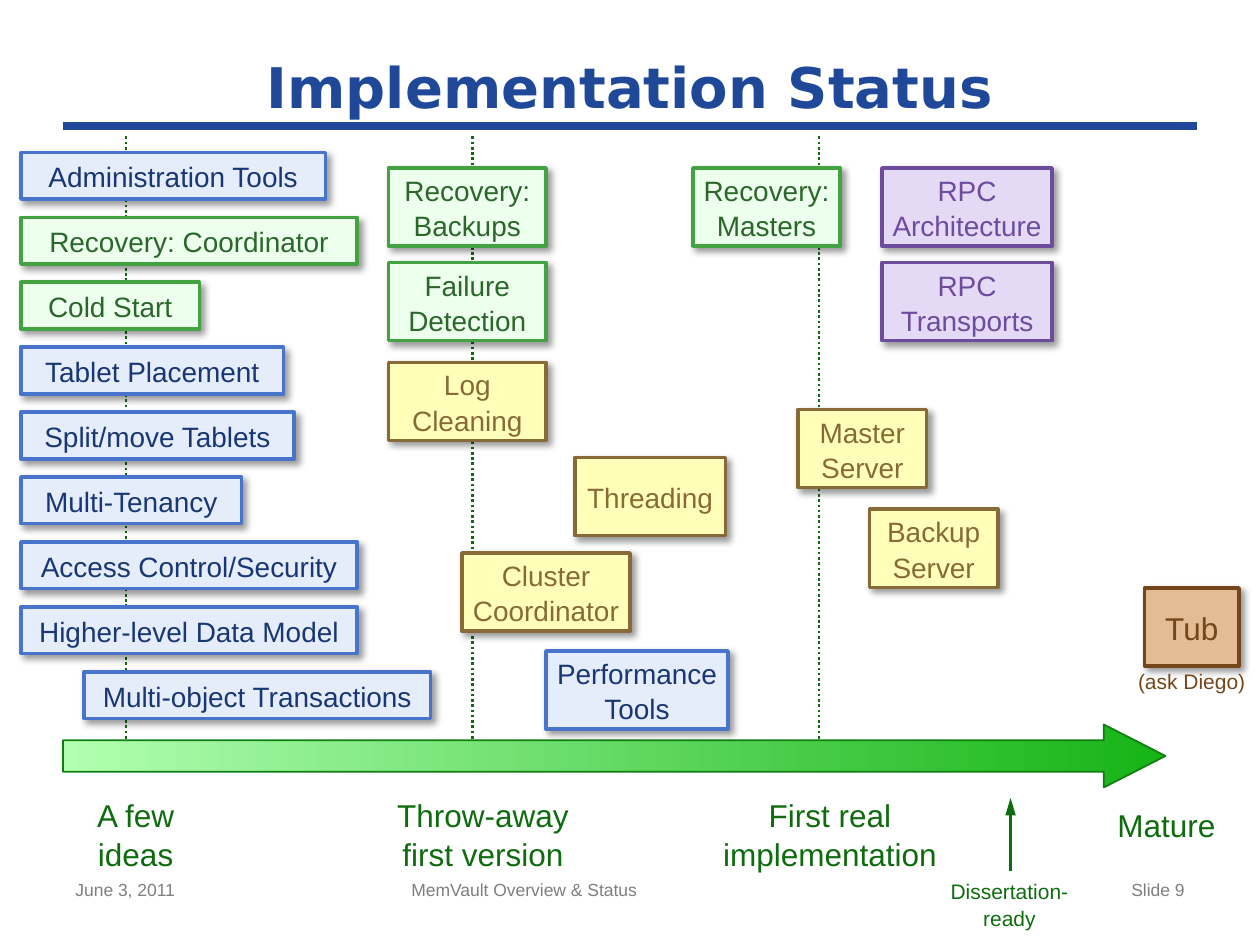
from dataclasses import dataclass

from lxml.etree import SubElement
from pptx import Presentation
from pptx.dml.color import RGBColor as Rgb
from pptx.enum.dml import MSO_LINE as Dash
from pptx.enum.shapes import MSO_CONNECTOR as Conn, MSO_SHAPE as Shape
from pptx.enum.text import MSO_ANCHOR as Anchor, MSO_AUTO_SIZE as Fit, PP_ALIGN as Align
from pptx.oxml.ns import qn
from pptx.util import Pt


@dataclass(frozen=True)
class Theme:
    font: str = "Arial"
    head: str = "DejaVu Sans"
    navy: str = "1F4899"
    green: str = "0E6C0E"
    edge: str = "107E10"
    pale: str = "B1FFB1"
    vivid: str = "16B416"
    gray: str = "7F7F7F"
    brown: str = "73471B"
    title: int = 32
    stage: int = 18
    chip: int = 16
    note: int = 12
    foot: int = 10


@dataclass(frozen=True)
class Box:
    x: float
    y: float
    w: float
    h: float

    def sub(self, x, y, w, h):
        """A box whose corner is measured from this one."""
        return Box(self.x + x, self.y + y, w, h)

    def pts(self):
        return Pt(self.x), Pt(self.y), Pt(self.w), Pt(self.h)


T = Theme()
CHIP_H = 44.7

# kind: fill, outline, text
KINDS = {
    "blue": ("E6EDFA", "4974CB", "183774"),
    "green": ("EDFFED", "43A343", "2B672B"),
    "gold": ("FFFFB9", "886A38", "886A38"),
    "violet": ("E5DAF6", "6D4C9E", "6D4C9E"),
    "brown": ("E3BC95", T.brown, T.brown),
}

# text, kind, indent, width
IDEAS = [
    ("Administration Tools", "blue", 0, 174),
    ("Recovery: Coordinator", "green", 0, 192),
    ("Cold Start", "green", 0, 102),
    ("Tablet Placement", "blue", 0, 150),
    ("Split/move Tablets", "blue", 0, 156),
    ("Multi-Tenancy", "blue", 0, 126),
    ("Access Control/Security", "blue", 0, 192),
    ("Higher-level Data Model", "blue", 0, 192),
    ("Multi-object Transactions", "blue", 36, 198),
]

# text, kind, left, top, width
PARTS = [
    ("Recovery:\nBackups", "green", 0, 0, 90),
    ("Failure\nDetection", "green", 0, 54, 90),
    ("Log\nCleaning", "gold", 0, 111, 90),
    ("Threading", "gold", 106.5, 165.4, 86),
    ("Cluster\nCoordinator", "gold", 42, 220, 96),
    ("Performance\nTools", "blue", 90, 276, 104),
    ("Recovery:\nMasters", "green", 174, 0, 84),
    ("RPC\nArchitecture", "violet", 282, 0, 97.2),
    ("RPC\nTransports", "violet", 282, 54, 97.2),
    ("Master\nServer", "gold", 234, 138, 73.5),
    ("Backup\nServer", "gold", 274.8, 195, 73.5),
]

# text, left, top, width, height
STAGES = [
    ("A few\nideas", 12, 0, 59, 51),
    ("Throw-away\nfirst version", 183, 0, 114, 51),
    ("First real\nimplementation", 369.5, 0, 137.5, 51),
    ("Mature", 595, 6, 71, 29),
]


def write(shape, text, size, color, align=Align.CENTER, font=T.font,
          bold=False, wrap=False):
    frame = shape.text_frame
    frame.word_wrap = wrap
    para = frame.paragraphs[0]
    para.alignment = align
    para.line_spacing = 1.05
    for i, line in enumerate(text.split("\n")):
        if i:
            para.add_line_break()
        run = para.add_run()
        run.text = line
        run.font.name, run.font.size, run.font.bold = font, Pt(size), bold
        run.font.color.rgb = Rgb.from_string(color)


def label(slide, box, text, size, color, **style):
    shape = slide.shapes.add_textbox(*box.pts())
    write(shape, text, size, color, **style)
    shape.text_frame.auto_size = Fit.SHAPE_TO_FIT_TEXT


def rule(slide, x1, y1, x2, y2, color, width):
    line = slide.shapes.add_connector(Conn.STRAIGHT, Pt(x1), Pt(y1), Pt(x2), Pt(y2))
    line.line.color.rgb = Rgb.from_string(color)
    line.line.width = Pt(width)
    SubElement(line._element.spPr, qn("a:effectLst"))
    return line


def shade(shape):
    """Drop shadow down and to the right."""
    shape.shadow.inherit = False
    effects = shape._element.spPr.find(qn("a:effectLst"))
    drop = SubElement(effects, qn("a:outerShdw"), blurRad=str(Pt(4)),
                      dist=str(Pt(3)), dir="2700000", algn="tl", rotWithShape="0")
    color = SubElement(drop, qn("a:srgbClr"), val="000000")
    SubElement(color, qn("a:alpha"), val="40000")


def chip(slide, box, text, kind, size=T.chip):
    fill, edge, ink = KINDS[kind]
    shape = slide.shapes.add_shape(Shape.RECTANGLE, *box.pts())
    shape.fill.solid()
    shape.fill.fore_color.rgb = Rgb.from_string(fill)
    shape.line.color.rgb = Rgb.from_string(edge)
    shape.line.width = Pt(2)
    shade(shape)
    shape.text_frame.vertical_anchor = Anchor.MIDDLE
    write(shape, text, size, ink)


def header(slide, box):
    end = box.y + box.h
    rule(slide, box.x, end, box.x + box.w, end, T.navy, 4.5)
    shape = slide.shapes.add_textbox(*box.pts())
    shape.text_frame.vertical_anchor = Anchor.MIDDLE
    write(shape, "Implementation Status", T.title, T.navy, font=T.head,
          bold=True, wrap=True)


def guides(slide, box):
    for i in range(3):
        x = box.x + i * box.w / 2
        line = rule(slide, x, box.y, x, box.y + box.h, T.green, 1.5)
        line.line.dash_style = Dash.ROUND_DOT


def footer(slide, box):
    cells = [
        ("June 3, 2011", 0, 168, Align.LEFT),
        ("MemVault Overview & Status", 192, 270, Align.LEFT),
        ("Slide 9", 480, 168, Align.RIGHT),
    ]
    for text, x, w, align in cells:
        shape = slide.shapes.add_textbox(*box.sub(x, 0, w, box.h).pts())
        write(shape, text, T.foot, T.gray, align=align, wrap=True)


def axis(slide, box):
    """Maturity arrow with its stage names below."""
    arrow = slide.shapes.add_shape(Shape.RIGHT_ARROW, *box.pts())
    arrow.adjustments[1] = 0.98
    arrow.fill.gradient()
    arrow.fill.gradient_angle = 0
    for stop, color in zip(arrow.fill.gradient_stops, (T.pale, T.vivid)):
        stop.color.rgb = Rgb.from_string(color)
    arrow.line.color.rgb = Rgb.from_string(T.edge)
    arrow.line.width = Pt(1)
    arrow.shadow.inherit = False
    for text, x, y, w, h in STAGES:
        label(slide, box.sub(x, box.h + y, w, h), text, T.stage, T.green)


def ideas(slide, box):
    step = box.h / len(IDEAS)
    for i, (text, kind, x, w) in enumerate(IDEAS):
        chip(slide, box.sub(x, i * step, w, 26.7), text, kind)


def parts(slide, box):
    for text, kind, x, y, w in PARTS:
        chip(slide, box.sub(x, y, w, CHIP_H), text, kind)


def mature(slide, box):
    chip(slide, box.sub(12, 0, 54, CHIP_H), "Tub", "brown", T.stage)
    label(slide, box.sub(0, 42, box.w, 21.6), "(ask Diego)", T.note, T.brown, wrap=True)


def ready(slide, box):
    """Note with an arrow up to the axis."""
    x, y = box.x + box.w / 2 + 0.7, box.y + 42
    label(slide, box.sub(0, 42, box.w, 36), "Dissertation-\nready", T.note, T.green)
    line = rule(slide, x, y, x, box.y, T.green, 1.5)
    SubElement(line.line._get_or_add_ln(), qn("a:tailEnd"),
               type="triangle", w="med", len="lg")


def main():
    deck = Presentation()
    deck.slide_width, deck.slide_height = Pt(720), Pt(540)
    slide = deck.slides.add_slide(deck.slide_layouts[6])
    header(slide, Box(36, 24, 648, 48))
    guides(slide, Box(72, 78, 396, 348))
    footer(slide, Box(36, 498, 648, 31))
    axis(slide, Box(36, 414, 630, 36))
    parts(slide, Box(222, 96, 380, 321))
    ideas(slide, Box(12, 87.1, 234, 333.9))
    mature(slide, Box(642, 336, 78, 64))
    ready(slide, Box(535.8, 456, 82, 78))
    deck.save("out.pptx")


if __name__ == "__main__":
    main()
